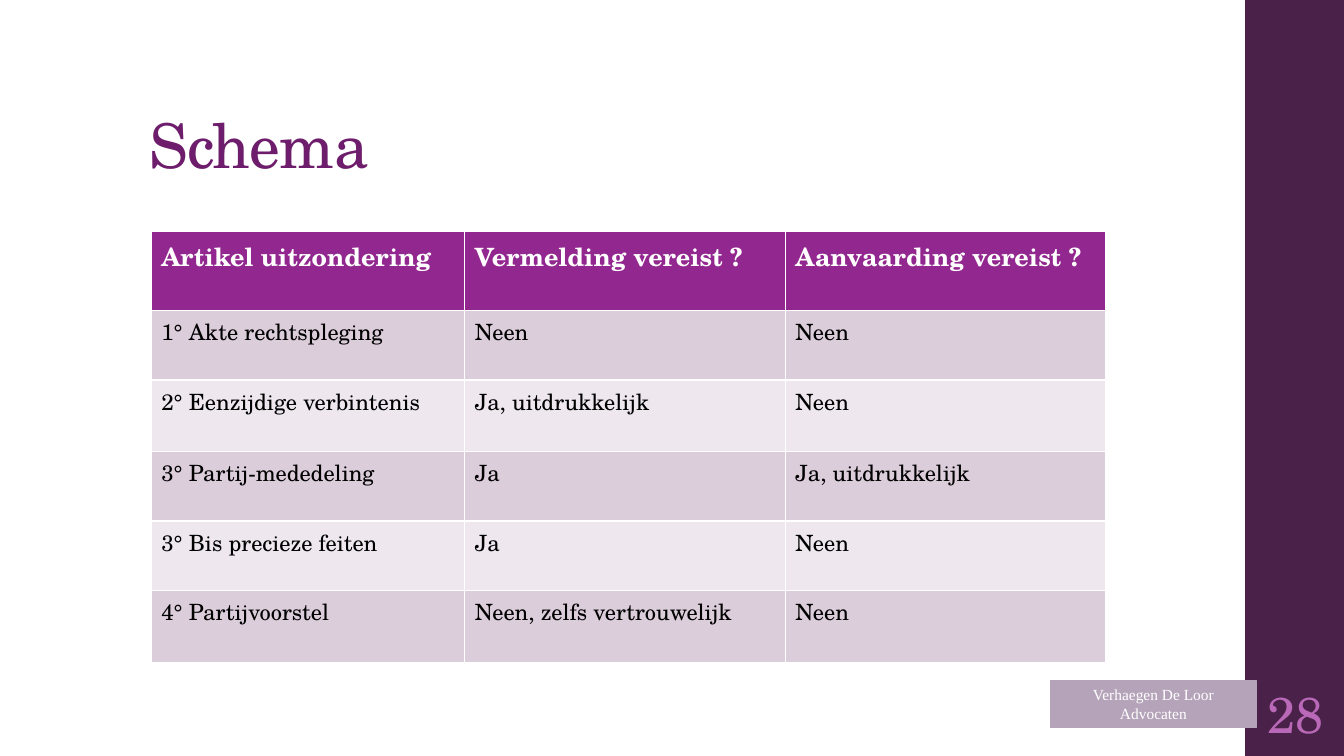
from pptx import Presentation
from pptx.dml.color import RGBColor
from pptx.enum.shapes import MSO_SHAPE
from pptx.enum.text import MSO_ANCHOR, PP_ALIGN
from pptx.util import Pt

PX = 9144
SERIF, FOOTER_FONT = "TeX Gyre Schola", "Times New Roman"
COLORS = {
    "band": "4A2249", "title": "6D1D6B", "header": "92278F",
    "odd": "DCCDDB", "even": "EEE8EE", "number": "BA69B8",
    "footer": "B5A3B9", "white": "FFFFFF", "black": "000000",
}
TITLE = "Schema"
PAGE_NUMBER = "28"
FOOTER_LINES = ["Verhaegen De Loor", "Advocaten"]
ROWS = [
    ("Artikel uitzondering", "Vermelding vereist ?", "Aanvaarding vereist ?"),
    ("1° Akte rechtspleging", "Neen", "Neen"),
    ("2° Eenzijdige verbintenis", "Ja, uitdrukkelijk", "Neen"),
    ("3° Partij-mededeling", "Ja", "Ja, uitdrukkelijk"),
    ("3° Bis precieze feiten", "Ja", "Neen"),
    ("4° Partijvoorstel", "Neen, zelfs vertrouwelijk", "Neen"),
]
COLUMN_WIDTHS = [311, 318, 318]
ROW_HEIGHTS = [78, 69, 71, 69, 69, 71]


def color(name):
    return RGBColor.from_string(COLORS[name])


def box(left, top, width, height):
    return [value * PX for value in (left, top, width, height)]


def write(frame, lines, size, font_name, color_name, align=PP_ALIGN.LEFT, bold=False):
    frame.word_wrap = True
    frame.text = "\n".join(lines)
    for paragraph in frame.paragraphs:
        paragraph.alignment = align
        font = paragraph.font
        font.size, font.name, font.bold = Pt(size), font_name, bold
        font.color.rgb = color(color_name)


def add_block(slide, bounds, color_name):
    shape = slide.shapes.add_shape(MSO_SHAPE.RECTANGLE, *box(*bounds))
    shape.shadow.inherit = False
    shape.fill.solid()
    shape.fill.fore_color.rgb = color(color_name)
    shape.line.color.rgb = color(color_name)
    shape.line.width = Pt(0.75)
    return shape


def add_title(slide):
    frame = slide.shapes.add_textbox(*box(138, 40, 1060, 145)).text_frame
    frame.vertical_anchor = MSO_ANCHOR.BOTTOM
    write(frame, [TITLE], 44, SERIF, "title")
    paragraph = frame.paragraphs[0]
    paragraph.line_spacing = 0.9
    paragraph.runs[0].font._element.set("spc", "-50")


def add_scheme(slide):
    bounds = box(150, 230, sum(COLUMN_WIDTHS), sum(ROW_HEIGHTS))
    table = slide.shapes.add_table(len(ROWS), len(COLUMN_WIDTHS), *bounds).table
    for column, width in zip(table.columns, COLUMN_WIDTHS):
        column.width = width * PX
    for index, (row, height, texts) in enumerate(zip(table.rows, ROW_HEIGHTS, ROWS)):
        row.height = height * PX
        header = index == 0
        fill = "header" if header else "odd" if index % 2 else "even"
        size, text_color = (18, "white") if header else (16, "black")
        for cell, text in zip(row.cells, texts):
            cell.fill.solid()
            cell.fill.fore_color.rgb = color(fill)
            write(cell.text_frame, [text], size, SERIF, text_color, bold=header)


def add_page_number(slide):
    frame = slide.shapes.add_textbox(*box(1235, 675, 100, 65)).text_frame
    frame.vertical_anchor = MSO_ANCHOR.MIDDLE
    frame.margin_left = frame.margin_right = 5 * PX
    frame.margin_top = frame.margin_bottom = 5 * PX
    write(frame, [PAGE_NUMBER], 36, SERIF, "number", PP_ALIGN.CENTER)


def main():
    presentation = Presentation()
    presentation.slide_width, presentation.slide_height = 1333 * PX, 750 * PX
    slide = presentation.slides.add_slide(presentation.slide_layouts[6])
    band = add_block(slide, (1235, 0, 100, 750), "band")
    band.line.fill.background()
    add_title(slide)
    add_scheme(slide)
    add_page_number(slide)
    footer = add_block(slide, (1042, 675, 204, 47), "footer")
    footer.text_frame.vertical_anchor = MSO_ANCHOR.TOP
    write(footer.text_frame, FOOTER_LINES, 11, FOOTER_FONT, "white", PP_ALIGN.CENTER)
    presentation.save("out.pptx")


if __name__ == "__main__":
    main()
